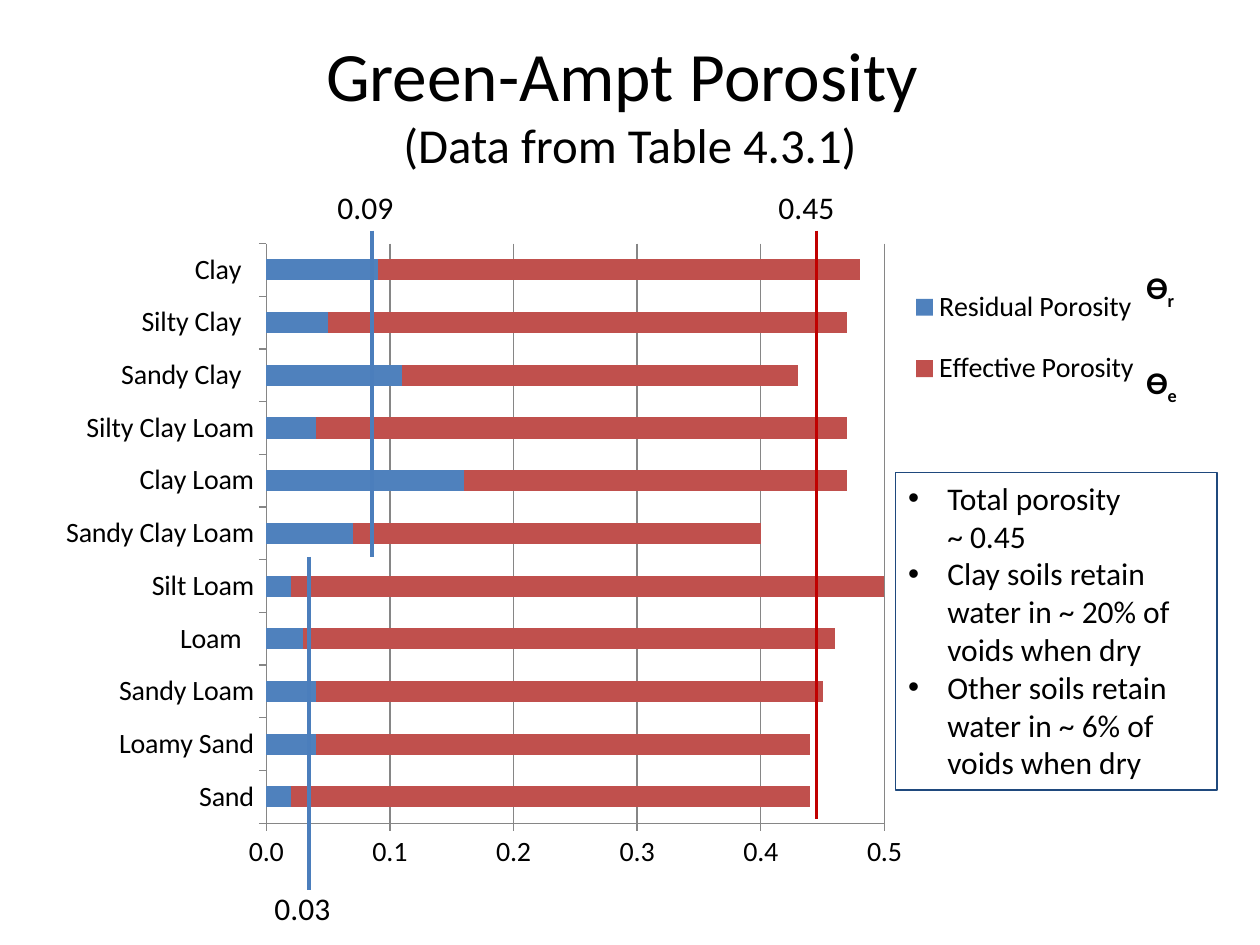
from lxml import etree
from pptx import Presentation
from pptx.chart.data import CategoryChartData
from pptx.dml.color import RGBColor
from pptx.enum.chart import XL_CHART_TYPE as ChartType, XL_LEGEND_POSITION as LegendPos, XL_TICK_MARK as Tick
from pptx.enum.shapes import MSO_CONNECTOR as Connector, MSO_SHAPE as Shape
from pptx.enum.text import MSO_ANCHOR as Anchor, PP_ALIGN as Align
from pptx.oxml import parse_xml
from pptx.oxml.ns import nsdecls, qn
from pptx.util import Inches, Pt

FONT = "Calibri"
BLACK, BLUE, RED = "000000", "4F81BD", "C0504D"
BLUE_LINE, RED_LINE, BOX_LINE, GRID = "4B7EBC", "C00000", "1F497D", "868686"

# Soil, residual porosity, effective porosity (bottom bar first)
SOILS = [
    ("Sand", 0.02, 0.42),
    ("Loamy Sand", 0.04, 0.40),
    ("Sandy Loam", 0.04, 0.41),
    ("Loam  ", 0.03, 0.43),
    ("Silt Loam", 0.02, 0.49),
    ("Sandy Clay Loam", 0.07, 0.33),
    ("Clay Loam", 0.16, 0.31),
    ("Silty Clay Loam", 0.04, 0.43),
    ("Sandy Clay  ", 0.11, 0.32),
    ("Silty Clay  ", 0.05, 0.42),
    ("Clay  ", 0.09, 0.39),
]

# Marker: x, top, bottom, colour, label, label left, label top
MARKERS = [
    (2.95, 1.83, 4.42, BLUE_LINE, "0.09", 2.58, 1.44),
    (6.48, 1.83, 6.5, RED_LINE, "0.45", 6.08, 1.44),
    (2.45, 4.42, 7.06, BLUE_LINE, "0.03", 2.08, 7.01),
]

FINDINGS = [
    "Total porosity\v~ 0.45",
    "Clay soils retain water in ~ 20% of voids when dry",
    "Other soils retain water in ~ 6% of voids when dry",
]


def rgb(value):
    return RGBColor.from_string(value)


def style_font(font, size, color=BLACK, bold=False):
    formats = {"name": FONT, "size": Pt(size), "bold": bold}
    for key, value in formats.items():
        setattr(font, key, value)
    font.color.rgb = rgb(color)


def style_line(line, color, width):
    line.color.rgb = rgb(color)
    line.width = Pt(width)


def add_run(paragraph, text, size, bold=False):
    run = paragraph.add_run()
    run.text = text
    style_font(run.font, size, bold=bold)
    return run


def add_text(slide, left, top, width, height, wrap=False):
    box = slide.shapes.add_textbox(Inches(left), Inches(top), Inches(width), Inches(height))
    box.text_frame.word_wrap = wrap
    return box.text_frame


def add_title(slide):
    frame = add_text(slide, 0.5, 0.19, 9, 1.25, wrap=True)
    frame.vertical_anchor = Anchor.MIDDLE
    paragraph = frame.paragraphs[0]
    paragraph.alignment = Align.CENTER
    add_run(paragraph, "Green-Ampt Porosity ", 39.6)
    paragraph.add_line_break()
    add_run(paragraph, "(Data from Table 4.3.1)", 27.9)


def set_layout(parent, x, y, w, h, inner=False):
    """Place a chart part by fractions of the chart area."""
    for old in parent.findall(qn("c:layout")):
        parent.remove(old)
    values = {"xMode": "edge", "yMode": "edge", "x": x, "y": y, "w": w, "h": h}
    if inner:
        values = {"layoutTarget": "inner", **values}
    parts = "".join(f'<c:{key} val="{value}"/>' for key, value in values.items())
    layout = parse_xml(f"<c:layout {nsdecls('c')}><c:manualLayout>{parts}</c:manualLayout></c:layout>")
    position = parent.find(qn("c:legendPos"))
    if position is None:
        parent.insert(0, layout)
    else:
        position.addnext(layout)


def add_porosity_chart(slide):
    soils, residual, effective = zip(*SOILS)
    data = CategoryChartData()
    data.categories = soils
    data.add_series("Residual Porosity", residual)
    data.add_series("Effective Porosity", effective)
    chart = slide.shapes.add_chart(ChartType.BAR_STACKED, Inches(0.33), Inches(1.83),
                                   Inches(8.92), Inches(5.17), data).chart
    chart.has_title = False
    style_font(chart.font, 10)

    # Bars
    plot = chart.plots[0]
    for key, value in {"gap_width": 150, "overlap": 100, "vary_by_categories": False}.items():
        setattr(plot, key, value)
    for series, color in zip(plot.series, (BLUE, RED)):
        series.format.fill.solid()
        series.format.fill.fore_color.rgb = rgb(color)

    # Axes
    for axis in (chart.category_axis, chart.value_axis):
        axis.major_tick_mark, axis.minor_tick_mark = Tick.OUTSIDE, Tick.NONE
        style_font(axis.tick_labels.font, 16)
        style_line(axis.format.line, GRID, 0.75)
    scale = {"minimum_scale": 0, "maximum_scale": 0.5, "major_unit": 0.1, "has_major_gridlines": True}
    for key, value in scale.items():
        setattr(chart.value_axis, key, value)
    style_line(chart.value_axis.major_gridlines.format.line, GRID, 0.75)
    labels = chart.value_axis.tick_labels
    labels.number_format, labels.number_format_is_linked = "0.0", False

    # Legend
    chart.has_legend = True
    legend = chart.legend
    legend.position, legend.include_in_layout = LegendPos.RIGHT, False
    style_font(legend.font, 16)
    legend_xml = chart.element.find(".//" + qn("c:legend"))
    plot_area = chart.element.find(".//" + qn("c:plotArea"))
    set_layout(plot_area, 0.2, 0.02, 0.55, 0.89, inner=True)
    set_layout(legend_xml, 0.76, 0.05, 0.23, 0.23)


def add_marker(slide, x, top, bottom, color, label, label_left, label_top):
    line = slide.shapes.add_connector(Connector.STRAIGHT, Inches(x), Inches(top),
                                      Inches(x), Inches(bottom))
    style_line(line.line, color, 2.25)
    etree.SubElement(line.element.spPr, qn("a:effectLst"))
    frame = add_text(slide, label_left, label_top, 0.65, 0.4)
    add_run(frame.paragraphs[0], label, 18)


def add_findings(slide):
    box = slide.shapes.add_shape(Shape.RECTANGLE, Inches(7.11), Inches(3.75),
                                 Inches(2.55), Inches(2.52))
    box.shadow.inherit = False
    box.fill.background()
    style_line(box.line, BOX_LINE, 0.75)
    frame = box.text_frame
    frame.word_wrap, frame.vertical_anchor = True, Anchor.TOP
    for index, finding in enumerate(FINDINGS):
        paragraph = frame.add_paragraph() if index else frame.paragraphs[0]
        paragraph.alignment = Align.LEFT
        # Hanging bullet
        properties = paragraph._p.get_or_add_pPr()
        properties.set("marL", str(Inches(0.31)))
        properties.set("indent", str(-Inches(0.31)))
        etree.SubElement(properties, qn("a:buFont")).set("typeface", "Arial")
        etree.SubElement(properties, qn("a:buChar")).set("char", "•")
        for line_number, line in enumerate(finding.split("\v")):
            if line_number:
                paragraph.add_line_break()
            add_run(paragraph, line, 18)


def add_theta(slide, subscript, top, width):
    paragraph = add_text(slide, 9, top, width, 0.4).paragraphs[0]
    add_run(paragraph, "ϴ", 18, bold=True)
    run = add_run(paragraph, subscript, 18, bold=True)
    run.font._element.set("baseline", "-25000")


def main():
    deck = Presentation()
    deck.slide_width, deck.slide_height = Inches(10), Inches(7.5)
    slide = deck.slides.add_slide(deck.slide_layouts[6])
    add_title(slide)
    add_porosity_chart(slide)
    for marker in MARKERS:
        add_marker(slide, *marker)
    add_findings(slide)
    add_theta(slide, "e", 2.83, 0.46)
    add_theta(slide, "r", 2.08, 0.43)
    deck.save("out.pptx")


if __name__ == "__main__":
    main()
